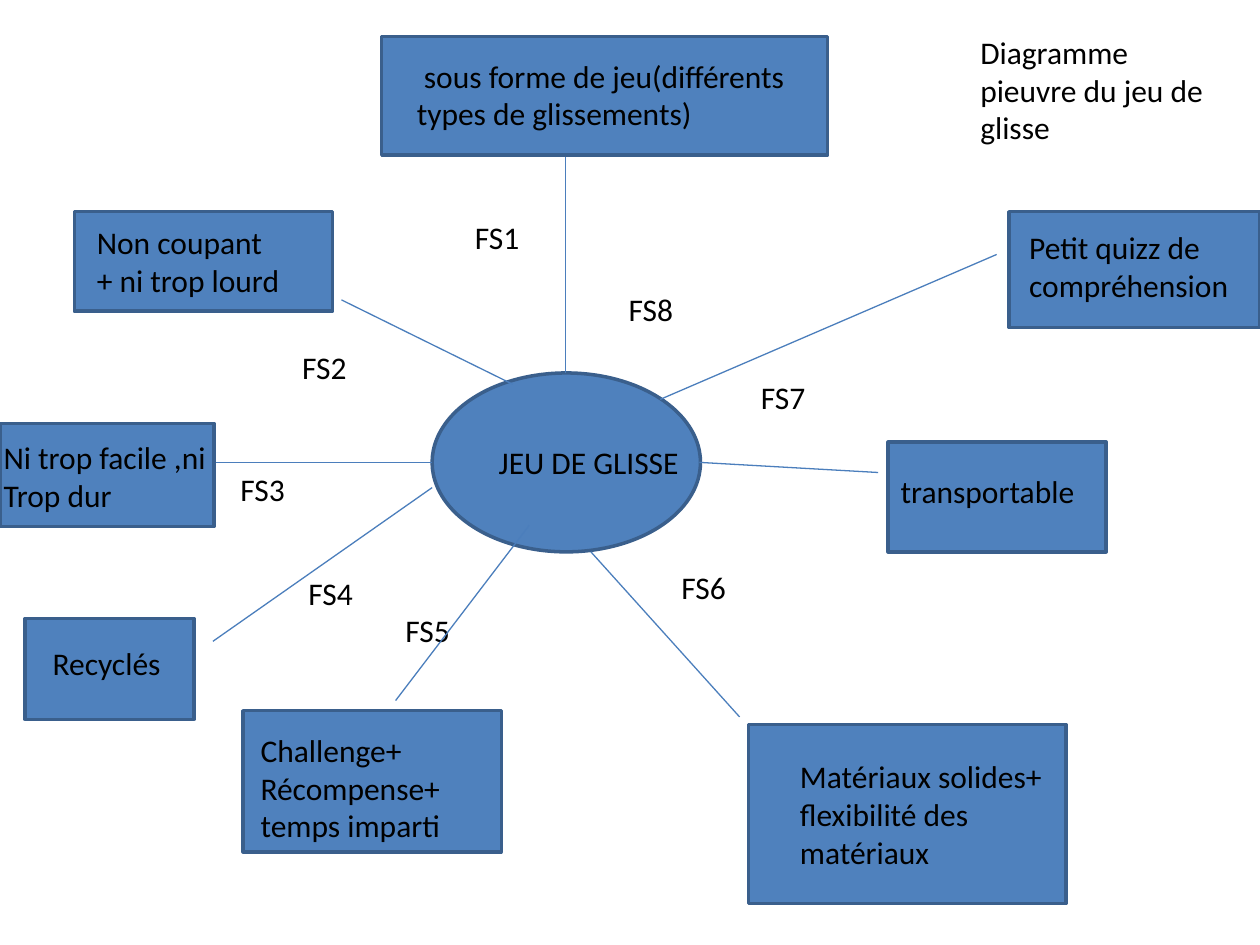
from typing import NamedTuple

from lxml import etree
from pptx import Presentation
from pptx.dml.color import RGBColor
from pptx.enum.shapes import MSO_CONNECTOR, MSO_SHAPE
from pptx.enum.text import MSO_ANCHOR, MSO_AUTO_SIZE, PP_ALIGN
from pptx.oxml.ns import qn
from pptx.util import Inches, Pt

RECT, OVAL = MSO_SHAPE.RECTANGLE, MSO_SHAPE.OVAL
STRAIGHT = MSO_CONNECTOR.STRAIGHT
LEFT, TOP = PP_ALIGN.LEFT, MSO_ANCHOR.TOP
NO_FIT = MSO_AUTO_SIZE.NONE

FONT, SIZE = "Calibri", 18
FILL, BORDER, LINK, INK = "4F81BD", "3A5F8C", "4B7EBC", "000000"


class Box(NamedTuple):
    x: float
    y: float
    w: float
    h: float


class Node(NamedTuple):
    """A filled shape and the text box laid over it."""
    shape: Box
    label: Box
    text: str


class Link(NamedTuple):
    x1: float
    y1: float
    x2: float
    y2: float


class Tag(NamedTuple):
    text: str
    x: float
    y: float
    w: float


TITLE = "Diagramme pieuvre du jeu de glisse"
TITLE_BOX = Box(7.68, 0.21, 2.13, 1.01)

CENTRE = Node(Box(3.43, 2.96, 2.13, 1.42), Box(3.86, 3.47, 2.01, 0.4),
              "JEU DE GLISSE")

CONSTRAINTS = [
    Node(Box(3.03, 0.29, 3.54, 0.94), Box(3.21, 0.4, 3.53, 0.71),
         " sous forme de jeu(différents types de glissements)"),
    Node(Box(0.59, 1.68, 2.05, 0.79), Box(0.67, 1.72, 1.89, 0.71),
         "Non coupant\n+ ni trop lourd"),
    Node(Box(0, 3.36, 1.7, 0.82), Box(-0.07, 3.43, 1.9, 0.71),
         "Ni trop facile ,ni\nTrop dur"),
    Node(Box(0.2, 4.91, 1.34, 0.8), Box(0.32, 5.06, 1.1, 0.4), "Recyclés"),
    Node(Box(1.93, 5.64, 2.05, 1.12), Box(1.97, 5.75, 2.87, 1.01),
         "Challenge+\nRécompense+\ntemps imparti"),
    Node(Box(5.94, 5.75, 2.52, 1.42), Box(6.25, 5.96, 2.12, 1.01),
         "Matériaux solides+ flexibilité des matériaux"),
    Node(Box(7.05, 3.51, 1.73, 0.87), Box(7.05, 3.7, 1.93, 0.4),
         "transportable"),
    Node(Box(8.01, 1.68, 1.99, 0.92), Box(8.07, 1.76, 2.13, 0.71),
         "Petit quizz de compréhension"),
]

LINKS = [
    Link(4.49, 2.96, 4.49, 1.23),
    Link(4.07, 3.05, 2.71, 2.38),
    Link(3.43, 3.67, 1.7, 3.67),
    Link(3.43, 3.87, 1.69, 5.09),
    Link(4.2, 4.17, 3.14, 5.56),
    Link(4.69, 4.38, 5.87, 5.69),
    Link(5.55, 3.67, 6.97, 3.75),
    Link(5.24, 3.17, 7.91, 2.02),
]

TAGS = [
    Tag("FS1", 3.67, 1.68, 0.79),
    Tag("FS2", 2.3, 2.71, 0.87),
    Tag("FS3", 1.81, 3.68, 0.98),
    Tag("FS4", 2.35, 4.51, 0.94),
    Tag("FS5", 3.12, 4.8, 0.94),
    Tag("FS6", 5.31, 4.46, 0.94),
    Tag("FS7", 5.94, 2.95, 0.79),
    Tag("FS8", 4.89, 2.25, 1.02),
]


def rgb(value: str) -> RGBColor:
    return RGBColor.from_string(value)


def inches(values) -> list:
    return [Inches(v) for v in values]


def write(tf, text: str) -> None:
    tf.text = text
    tf.word_wrap = True
    tf.auto_size = NO_FIT
    tf.vertical_anchor = TOP
    for p in tf.paragraphs:
        p.alignment = LEFT
        for r in p.runs:
            r.font.name = FONT
            r.font.size = Pt(SIZE)
            r.font.color.rgb = rgb(INK)


def add_label(s, box: Box, text: str) -> None:
    write(s.shapes.add_textbox(*inches(box)).text_frame, text)


def add_node(s, node: Node, kind=RECT) -> None:
    sp = s.shapes.add_shape(kind, *inches(node.shape))
    sp.shadow.inherit = False
    sp.fill.solid()
    sp.fill.fore_color.rgb = rgb(FILL)
    sp.line.color.rgb = rgb(BORDER)
    sp.line.width = Pt(2)
    add_label(s, node.label, node.text)


def add_link(s, link: Link) -> None:
    line = s.shapes.add_connector(STRAIGHT, *inches(link))
    line.line.color.rgb = rgb(LINK)
    line.line.width = Pt(0.75)
    etree.SubElement(line._element.spPr, qn("a:effectLst"))


def add_title(s) -> None:
    title = s.shapes.title
    title.left, title.top, title.width, title.height = inches(TITLE_BOX)
    write(title.text_frame, TITLE)


def main() -> None:
    prs = Presentation()
    prs.slide_width, prs.slide_height = Inches(10), Inches(7.5)
    s = prs.slides.add_slide(prs.slide_layouts[5])
    add_title(s)
    add_node(s, CENTRE, OVAL)
    for tag in TAGS:
        add_label(s, Box(tag.x, tag.y, tag.w, 0.4), tag.text)
    for link in LINKS:
        add_link(s, link)
    for node in CONSTRAINTS:
        add_node(s, node)
    prs.save("out.pptx")


if __name__ == "__main__":
    main()
